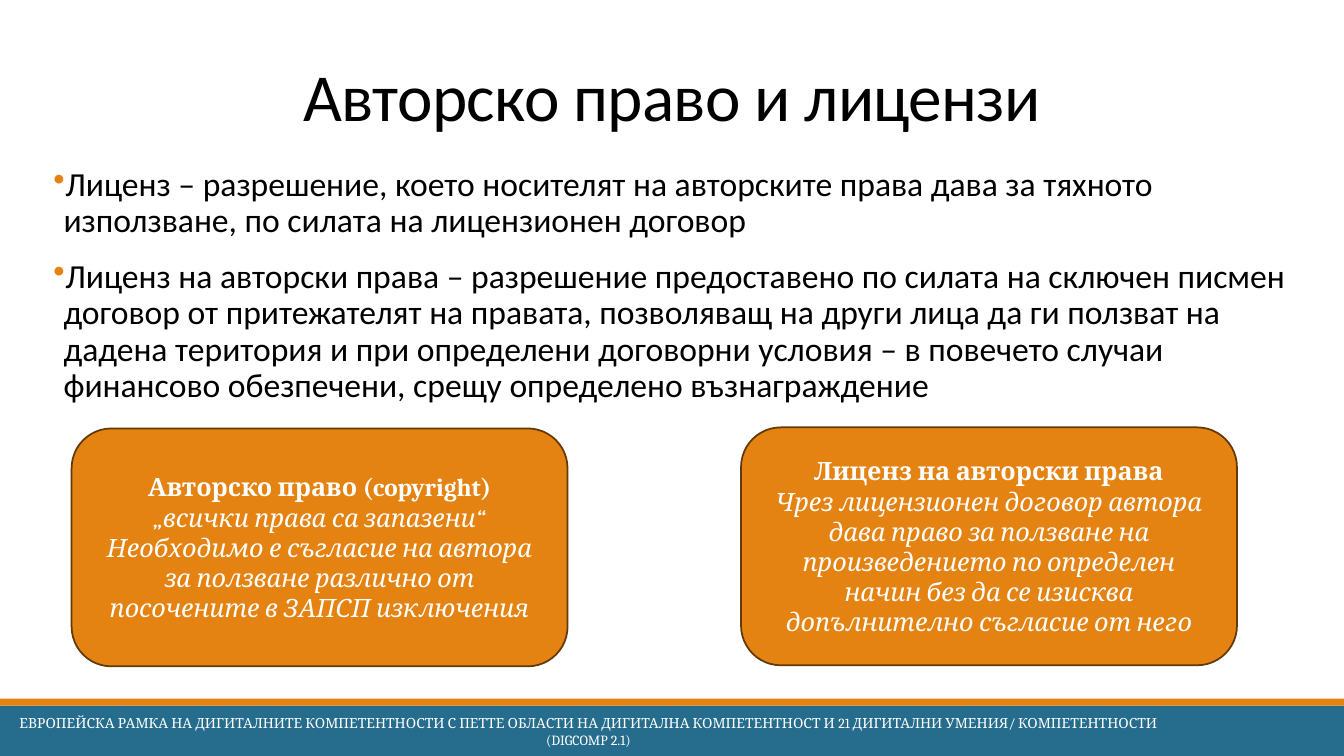
from lxml import etree
from pptx import Presentation
from pptx.dml.color import RGBColor
from pptx.enum.shapes import MSO_SHAPE
from pptx.enum.text import MSO_ANCHOR, PP_ALIGN
from pptx.oxml.ns import qn
from pptx.util import Inches, Pt

RECT, ROUND = MSO_SHAPE.RECTANGLE, MSO_SHAPE.ROUNDED_RECTANGLE
TOP, MIDDLE, BOTTOM = MSO_ANCHOR.TOP, MSO_ANCHOR.MIDDLE, MSO_ANCHOR.BOTTOM
LEFT, CENTER = PP_ALIGN.LEFT, PP_ALIGN.CENTER
COLORS = {"orange": "E48312", "brown": "643908", "blue": "256C8D",
          "white": "FFFFFF", "black": "000000"}


def rgb(name):
    return RGBColor.from_string(COLORS[name])


def add_text(p, text, size=18, font="Cambria", color="white", bold=False,
             italic=False, spacing=None):
    r = p.add_run()
    r.text = text
    r.font.size, r.font.name = Pt(size), font
    r.font.bold, r.font.italic = bold, italic
    r.font.color.rgb = rgb(color)
    if spacing is not None:
        r.font._element.set("spc", str(round(spacing * 100)))


class Deck:
    """Hold the style and the current slide; lengths are percent of its size."""

    def __init__(self):
        self.prs = Presentation()
        self.prs.slide_width, self.prs.slide_height = Inches(13.33), Inches(7.5)
        self.s = self.prs.slides.add_slide(self.prs.slide_layouts[6])

    def box(self, x, y, w, h):
        col, row = self.prs.slide_width / 100, self.prs.slide_height / 100
        return round(x * col), round(y * row), round(w * col), round(h * row)

    def shape(self, kind, at, fill, line=None):
        sp = self.s.shapes.add_shape(kind, *self.box(*at))
        sp.shadow.inherit = False
        sp.fill.solid()
        sp.fill.fore_color.rgb = rgb(fill)
        if line:
            sp.line.color.rgb = rgb(line)
            sp.line.width = Pt(1.25)
        else:
            sp.line.fill.background()
        return sp

    def paragraphs(self, tf, texts, anchor=TOP, align=CENTER, line_spacing=None,
                   formats=({},)):
        tf.word_wrap = True
        tf.vertical_anchor = anchor
        for i, text in enumerate(texts):
            p = tf.paragraphs[0] if i == 0 else tf.add_paragraph()
            p.alignment, p.line_spacing = align, line_spacing
            add_text(p, text, **formats[min(i, len(formats) - 1)])
        return tf.paragraphs

    def text(self, at, texts, inset=None, **kwargs):
        tf = self.s.shapes.add_textbox(*self.box(*at)).text_frame
        if inset is not None:
            tf.margin_left = tf.margin_right = Inches(inset)
            tf.margin_top = tf.margin_bottom = Inches(inset)
        return self.paragraphs(tf, texts, **kwargs)

    def bullets(self, at, texts, **kwargs):
        for p in self.text(at, texts, align=LEFT, line_spacing=0.9, **kwargs):
            p.space_before, p.space_after = Pt(12), Pt(2)
            pPr = p._p.get_or_add_pPr()
            pPr.set("marL", str(Inches(0.1)))
            pPr.set("indent", str(Inches(-0.16)))
            clr = etree.SubElement(pPr, qn("a:buClr"))
            etree.SubElement(clr, qn("a:srgbClr"), val=COLORS["orange"])
            etree.SubElement(pPr, qn("a:buChar"), char="•")

    def card(self, x, y, texts):
        sp = self.shape(ROUND, (x, y, 36.9, 31.47), "orange", "brown")
        sp.adjustments[0] = 0.167
        self.paragraphs(sp.text_frame, texts, anchor=MIDDLE,
                        formats=({"bold": True}, {"italic": True}))


def main():
    deck = Deck()
    deck.shape(RECT, (0, 93.33, 100, 6.67), "blue")
    deck.shape(RECT, (0, 92.4, 100, 0.93), "orange")
    deck.text((0, 0, 100, 18.53), ["Авторско право и лицензи"],
              anchor=BOTTOM, line_spacing=0.85,
              formats=({"size": 48, "font": "Calibri", "color": "black",
                        "spacing": -0.5},))
    deck.bullets((3.38, 21.07, 93.47, 70.8), [
        "Лиценз – разрешение, което носителят на авторските права дава за "
        "тяхното използване, по силата на лицензионен договор",
        "Лиценз на авторски права – разрешение предоставено по силата на "
        "сключен писмен договор от притежателят на правата, позволяващ на "
        "други лица да ги ползват на дадена територия и при определени "
        "договорни условия – в повечето случаи финансово обезпечени, срещу "
        "определено възнаграждение",
    ], inset=0.08, formats=({"size": 24, "font": "Calibri", "color": "black"},))
    deck.text((0, 94.13, 87.55, 5.33), [
        "ЕВРОПЕЙСКА РАМКА НА ДИГИТАЛНИТЕ КОМПЕТЕНТНОСТИ С ПЕТТЕ ОБЛАСТИ НА "
        "ДИГИТАЛНА КОМПЕТЕНТНОСТ И 21 ДИГИТАЛНИ УМЕНИЯ/ КОМПЕТЕНТНОСТИ "
        "(DIGCOMP 2.1)",
    ], inset=0.04, anchor=MIDDLE, formats=({"size": 10},))
    deck.card(5.33, 56.67, [
        "Авторско право (copyright)",
        "„всички права са запазени“",
        "Необходимо е съгласие на автора за ползване различно от посочените "
        "в ЗАПСП изключения",
    ])
    deck.card(55.14, 56.53, [
        "Лиценз на авторски права",
        "Чрез лицензионен договор автора дава право за ползване на "
        "произведението по определен начин без да се изисква допълнително "
        "съгласие от него",
    ])
    deck.prs.save("out.pptx")


if __name__ == "__main__":
    main()
